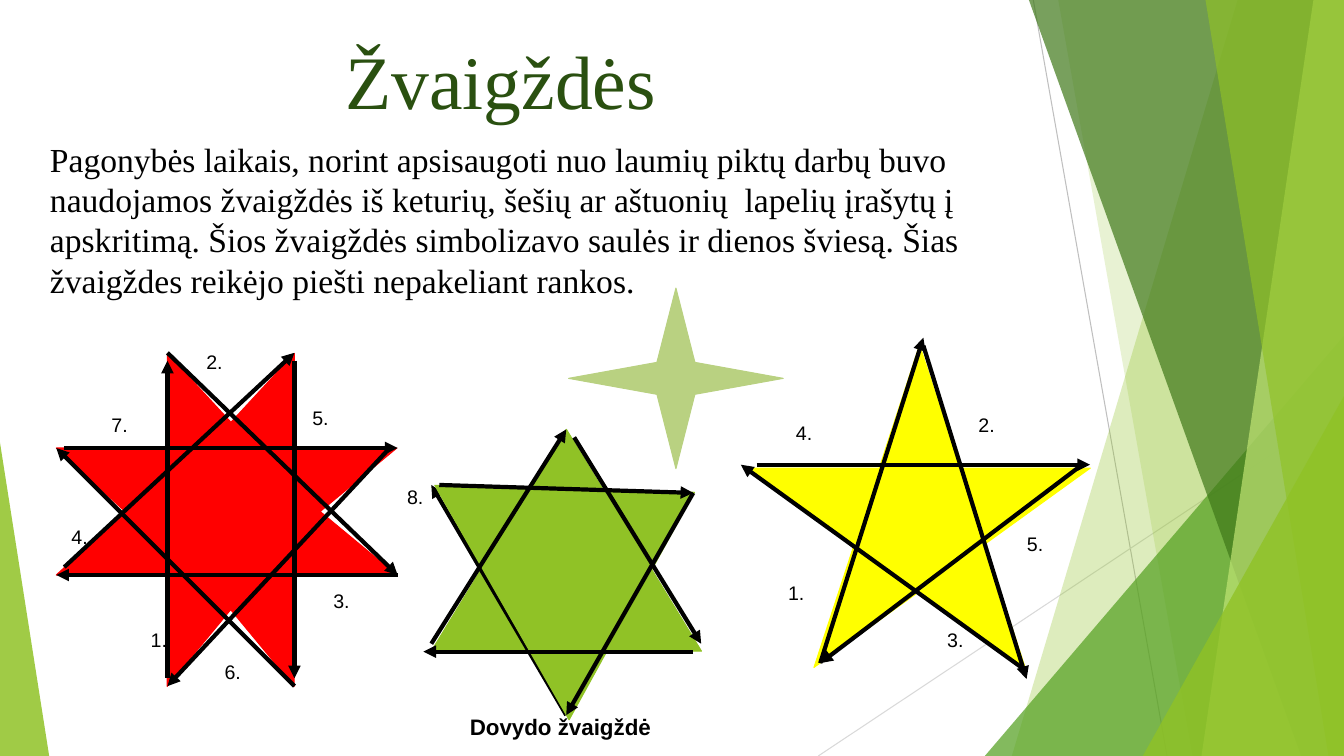
from lxml import etree
from pptx import Presentation
from pptx import util as u
from pptx.dml.color import RGBColor
from pptx.enum import shapes, text
from pptx.oxml import ns

WIDTH, HEIGHT = 33.87, 19.05
COLORS = {
    "black": "000000", "title": "2A5010", "red": "FF0000", "yellow": "FFFF00",
    "green": "90C226", "mid": "54A021", "dark": "3F7819", "lime": "C0E474",
    "sage": "B9D181", "grey": "BFBFBF", "pale": "D9D9D9",
}
KINDS = shapes.MSO_SHAPE


def color(name):
    """Return the named colour."""
    return RGBColor.from_string(COLORS[name])


def paint(shape, name, opacity=100, outline=True):
    """Fill a shape with one colour and give it a matching or no outline."""
    shape.shadow.inherit = False
    shape.fill.solid()
    shape.fill.fore_color.rgb = color(name)
    if opacity < 100:
        tint = shape.fill._xPr.find(".//" + ns.qn("a:srgbClr"))
        etree.SubElement(tint, ns.qn("a:alpha"), val=str(opacity * 1000))
    if outline:
        shape.line.color.rgb = color(name)
        shape.line.width = u.Pt(0.75)
    else:
        shape.line.fill.background()


def add_figure(parts, kind, box, name, adjust=None, turn=0, **look):
    """Add a painted preset shape."""
    shape = parts.add_shape(kind, *map(u.Cm, box))
    if adjust is not None:
        shape.adjustments[0] = adjust
    shape.rotation = turn
    paint(shape, name, **look)


def add_line(parts, ends, name="black", width=3, arrow=True):
    """Add a straight line, with an arrowhead at its end if wanted."""
    line = parts.add_connector(shapes.MSO_CONNECTOR.STRAIGHT, *map(u.Cm, ends))
    line.line.color.rgb = color(name)
    line.line.width = u.Pt(width)
    if arrow:
        etree.SubElement(line.line._get_or_add_ln(), ns.qn("a:tailEnd"), type="triangle")
    etree.SubElement(line._element.spPr, ns.qn("a:effectLst"))


def add_text(parts, box, words, size=14, font="Arial", name="black", bold=False,
             wrap=True, align=text.PP_ALIGN.LEFT, anchor=text.MSO_ANCHOR.TOP):
    """Add a text box holding one paragraph."""
    frame = parts.add_textbox(*map(u.Cm, box)).text_frame
    frame.word_wrap = wrap
    frame.vertical_anchor = anchor
    para = frame.paragraphs[0]
    para.alignment = align
    span = para.add_run()
    span.text = words
    span.font.size = u.Pt(size)
    span.font.name = font
    span.font.bold = bold
    span.font.color.rgb = color(name)


def add_arrows(parts, left, top, strokes):
    """Draw strokes given relative to a corner."""
    for x1, y1, x2, y2 in strokes:
        add_line(parts, (left + x1, top + y1, left + x2, top + y2))


def add_numbers(parts, left, top, spots):
    """Number the strokes at spots given relative to a corner."""
    for number, (x, y) in enumerate(spots, 1):
        add_text(parts, (left + x, top + y, 1.2, 0.84), f"{number}.")


def draw_backdrop(page, width, height):
    """Draw the translucent facets at the slide edges."""
    parts = page.shapes.add_group_shape().shapes

    def facet(top_x, bottom_x, name, opacity):
        """Add a facet reaching from a slanted edge to the right side."""
        corners = [(top_x, 0), (width, 0), (width, height), (bottom_x, height)]
        points = [(u.Cm(x), u.Cm(y)) for x, y in corners]
        builder = parts.build_freeform(*points[0])
        builder.add_line_segments(points[1:])
        paint(builder.convert_to_shape(), name, opacity, outline=False)

    def wedge(left, top, right, tip, name, opacity):
        """Add a triangle standing on the bottom edge."""
        add_figure(parts, KINDS.ISOSCELES_TRIANGLE, (left, top, right - left, height - top),
                   name, tip, opacity=opacity, outline=False)

    add_line(parts, (26.04, 0, 29.41, height), "grey", 0.75, arrow=False)
    add_line(parts, (width, 10.24, 20.62, height), "pale", 0.75, arrow=False)
    facet(31.19, 25.5, "green", 30)
    facet(26.67, 30.05, "green", 20)
    wedge(24.82, 8.46, width, 1, "mid", 72)
    facet(25.93, 32.79, "dark", 70)
    facet(33.1, 30.28, "lime", 70)
    facet(30.38, 33.48, "green", 65)
    wedge(28.8, 9.98, width, 1, "green", 80)
    wedge(0, 11.15, 1.24, 0, "green", 85)


def draw_eight_star(page, left, top):
    """Draw the red eight-pointed star with its numbered strokes."""
    parts = page.shapes.add_group_shape().shapes
    for x, y, width, adjust, turn in [
        (0, 2.4, 5.33, 0.541, 0), (2.64, 2.4, 5.94, 0.604, 180),
        (1.8, 1.02, 5.2, 0.541, 90), (1.5, 3.91, 5.79, 0.604, 270),
    ]:
        add_figure(parts, KINDS.CHEVRON, (left + x, top + y, width, 3.2), "red", adjust, turn)
    add_arrows(parts, left, top, [
        (2.8, 8.2, 2.8, 0.2), (2.8, 0, 8.6, 5.6), (8.6, 5.6, 0, 5.6), (0.2, 5.4, 6, 0),
        (6, 0.2, 6, 8.2), (6, 8.4, 0, 2.4), (0.2, 2.4, 8.6, 2.4), (8.4, 2.4, 2.8, 8.4),
    ])
    add_numbers(parts, left, top, [
        (2.13, 6.81), (3.53, -0.2), (6.73, 5.82), (0.13, 4.22),
        (6.2, 1.22), (3.99, 7.62), (1.14, 1.4), (8.59, 3.2),
    ])


def draw_five_star(page, left, top):
    """Draw the yellow five-pointed star with its numbered strokes."""
    parts = page.shapes.add_group_shape().shapes
    add_figure(parts, KINDS.STAR_5_POINT, (left + 0.2, top + 0.18, 8.61, 8.13), "yellow")
    add_arrows(parts, left, top, [
        (2, 8.2, 4.6, 0), (4.6, 0.2, 7.2, 8.6), (7.2, 8.4, 0, 3.2),
        (0.4, 3.2, 8.8, 3.2), (8.6, 3.2, 2, 8.2),
    ])
    add_numbers(parts, left, top, [
        (0.94, 6), (5.74, 1.78), (4.95, 7.19), (1.14, 1.98), (6.96, 4.78),
    ])


def draw_six_star(page, left, top):
    """Draw the green six-pointed star made of two triangles."""
    parts = page.shapes.add_group_shape().shapes
    kind, size = KINDS.FLOWCHART_EXTRACT, (6.81, 5.59)
    add_figure(parts, kind, (left + 0.2, top, *size), "green")
    add_arrows(parts, left, top, [(3.6, 7.2, 0.2, 1.4)])
    add_figure(parts, kind, (left + 1, top + 0.18, *size), "green", turn=60.2)
    add_arrows(parts, left, top, [
        (6.8, 1.6, 3.6, 7.2), (0.2, 5.4, 3.6, 0), (3.8, 0.2, 7, 5.4),
        (0.4, 1.4, 6.8, 1.6), (6.8, 5.6, 0, 5.6),
    ])


def main():
    """Build the slide and save it."""
    deck = Presentation()
    deck.slide_width, deck.slide_height = u.Cm(WIDTH), u.Cm(HEIGHT)
    page = deck.slides.add_slide(deck.slide_layouts[6])
    draw_backdrop(page, WIDTH, HEIGHT)
    draw_eight_star(page, 1.42, 8.89)
    draw_five_star(page, 18.67, 8.51)
    add_text(page.shapes, (0.81, 0.58, 23.62, 2.82), "Žvaigždės", size=54,
             font="Times New Roman", name="title",
             align=text.PP_ALIGN.CENTER, anchor=text.MSO_ANCHOR.MIDDLE)
    draw_six_star(page, 10.67, 10.82)
    add_figure(page.shapes, KINDS.STAR_4_POINT, (14.33, 7.26, 5.41, 4.55), "sage", 0.125)
    add_text(page.shapes, (1.01, 3.37, 25.53, 4.37),
             "Pagonybės laikais, norint apsisaugoti nuo laumių piktų darbų buvo "
             "naudojamos žvaigždės iš keturių, šešių ar aštuonių  lapelių įrašytų į "
             "apskritimą. Šios žvaigždės simbolizavo saulės ir dienos šviesą. Šias "
             "žvaigždes reikėjo piešti nepakeliant rankos.",
             size=24, font="Times New Roman")
    add_text(page.shapes, (11.59, 17.85, 5.08, 0.94), "Dovydo žvaigždė", size=16,
             bold=True, wrap=False)
    deck.save("out.pptx")


if __name__ == "__main__":
    main()
